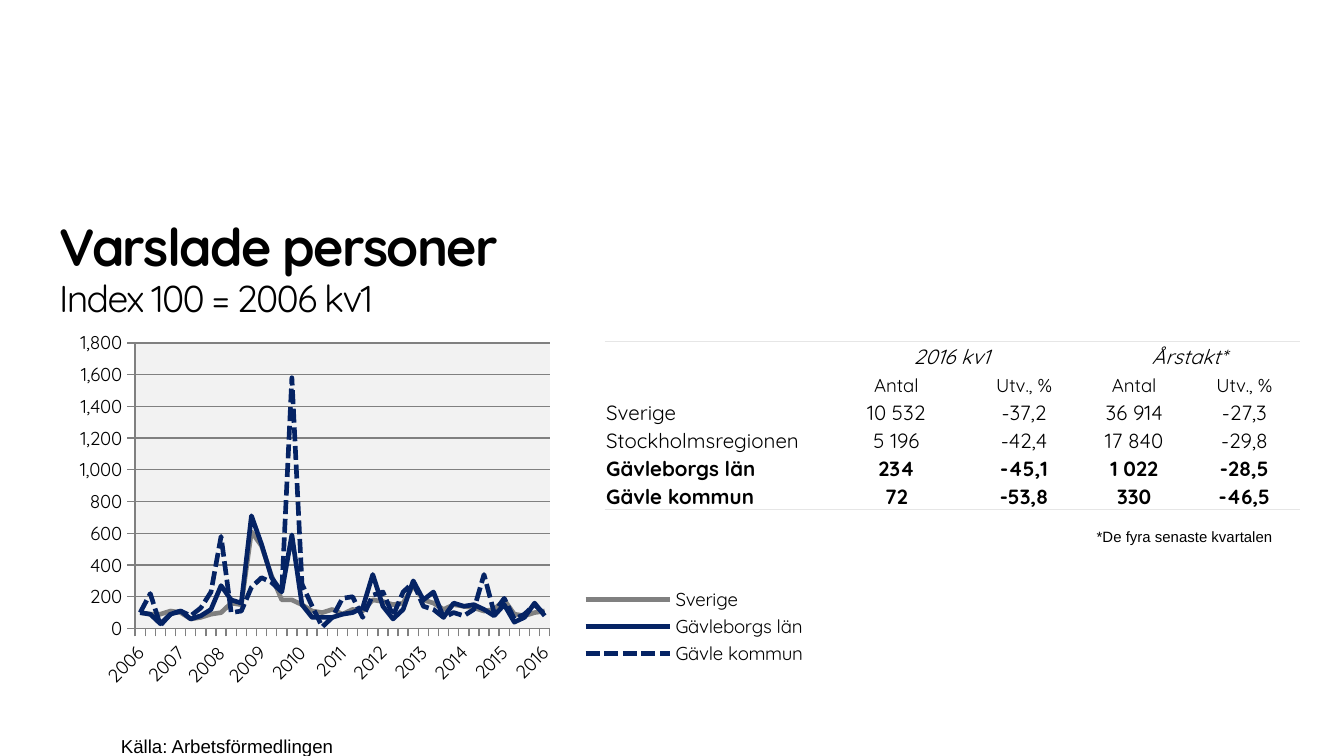
from dataclasses import dataclass

from lxml import etree
from pptx import Presentation
from pptx.chart.data import CategoryChartData
from pptx.dml.color import RGBColor
from pptx.enum.chart import XL_CHART_TYPE, XL_LEGEND_POSITION, XL_TICK_MARK
from pptx.enum.dml import MSO_LINE
from pptx.enum.text import MSO_ANCHOR, MSO_AUTO_SIZE, PP_ALIGN
from pptx.oxml import parse_xml
from pptx.oxml.ns import nsdecls, qn
from pptx.util import Inches, Pt

LINE_CHART = XL_CHART_TYPE.LINE
LEGEND_RIGHT = XL_LEGEND_POSITION.RIGHT
TICK_OUTSIDE = XL_TICK_MARK.OUTSIDE
SOLID, DASHED = MSO_LINE.SOLID, MSO_LINE.SQUARE_DOT
BOTTOM = MSO_ANCHOR.BOTTOM
FIT_SHAPE = MSO_AUTO_SIZE.SHAPE_TO_FIT_TEXT
LEFT, CENTER = PP_ALIGN.LEFT, PP_ALIGN.CENTER
TITLE_ONLY = 5
PLAIN_TABLE_STYLE = "{2D5ABB26-0587-4C30-8999-92F81FD0307C}"
WIDTH = Inches(10)
HEIGHT = WIDTH * 9 // 16


@dataclass(frozen=True)
class Theme:
    font: str = "Quicksand"
    note_font: str = "Arial"
    text: str = "000000"
    grey: str = "808080"
    navy: str = "052364"
    plot: str = "F2F2F2"
    rule: str = "E6E6E6"
    title_size: float = 28
    subtitle_size: float = 20
    table_size: float = 11
    small_size: float = 10
    note_size: float = 8
    series_width: float = 2.5


THEME = Theme()

COLUMN_WIDTHS = (1.63, 1.08, 0.82, 0.82, 0.82)
TABLE_ROWS = (
    ("", "2016 kv1", "", "Årstakt*", ""),
    ("", "Antal", "Utv., %", "Antal", "Utv., %"),
    ("Sverige", "10 532", "-37,2", "36 914", "-27,3"),
    ("Stockholmsregionen", "5 196", "-42,4", "17 840", "-29,8"),
    ("Gävleborgs län", "234", "-45,1", "1 022", "-28,5"),
    ("Gävle kommun", "72", "-53,8", "330", "-46,5"),
)
GROUP_ROW, UNIT_ROW, FIRST_BOLD_ROW = 0, 1, 4
LAST_ROW = len(TABLE_ROWS) - 1

QUARTERS = [str(2006 + i // 4) if i % 4 == 0 else "" for i in range(41)]
SERIES = (
    ("Sverige", THEME.grey, SOLID,
     (100, 90, 90, 110, 100, 60, 70, 90, 100, 160, 150, 610, 520, 330, 180, 180, 150, 110,
      100, 120, 90, 120, 110, 180, 170, 150, 160, 270, 180, 160, 120, 150, 140, 130, 110,
      120, 180, 90, 80, 100, 110)),
    ("Gävleborgs län", THEME.navy, SOLID,
     (100, 90, 30, 90, 110, 60, 80, 120, 270, 180, 160, 710, 530, 320, 230, 590, 150, 70,
      70, 70, 90, 100, 130, 340, 140, 60, 120, 300, 180, 230, 70, 160, 140, 150, 120, 80,
      150, 40, 70, 160, 80)),
    ("Gävle kommun", THEME.navy, DASHED,
     (100, 220, 20, 90, 110, 80, 130, 230, 580, 100, 110, 260, 320, 290, 230, 1580, 280,
      140, 10, 70, 190, 200, 70, 210, 230, 80, 230, 290, 140, 120, 70, 100, 80, 120, 340,
      100, 190, 60, 90, 150, 90)),
)


def area(left, top, width, height):
    """Turn percentages of the slide into a position and size."""
    return (int(WIDTH * left / 100), int(HEIGHT * top / 100),
            int(WIDTH * width / 100), int(HEIGHT * height / 100))


def style_font(font, size, name=THEME.font, bold=False, italic=False):
    font.name, font.size, font.bold, font.italic = name, Pt(size), bold, italic
    font.color.rgb = RGBColor.from_string(THEME.text)


def clear_margins(text_frame):
    text_frame.margin_left = text_frame.margin_right = 0
    text_frame.margin_top = text_frame.margin_bottom = 0


def add_title(slide, heading, subheading, place):
    title = slide.shapes.title
    title.left, title.top, title.width, title.height = place
    text_frame = title.text_frame
    clear_margins(text_frame)
    text_frame.vertical_anchor = BOTTOM
    text_frame.text = f"{heading}\v{subheading}"
    paragraph = text_frame.paragraphs[0]
    paragraph.alignment = LEFT
    paragraph.line_spacing = 0.95
    sizes = (THEME.title_size, THEME.subtitle_size)
    for run, size in zip(paragraph.runs, sizes):
        style_font(run.font, size, bold=size == THEME.title_size)
        run.font._element.set("spc", "-90")


def add_note(slide, text, size, place):
    text_frame = slide.shapes.add_textbox(*place).text_frame
    clear_margins(text_frame)
    text_frame.word_wrap = False
    text_frame.auto_size = FIT_SHAPE
    text_frame.text = text
    paragraph = text_frame.paragraphs[0]
    paragraph.alignment = LEFT
    paragraph.line_spacing = Pt(24)
    style_font(paragraph.runs[0].font, size, THEME.note_font)


def add_border(cell, side):
    border = etree.SubElement(cell._tc.get_or_add_tcPr(), qn(f"a:ln{side}"), w=str(Pt(1)))
    fill = etree.SubElement(border, qn("a:solidFill"))
    etree.SubElement(fill, qn("a:srgbClr"), val=THEME.rule)


def fill_cell(cell, text, row, column):
    if row == GROUP_ROW:
        add_border(cell, "T")
    if row == LAST_ROW:
        add_border(cell, "B")
    cell.fill.background()
    cell.vertical_anchor = BOTTOM
    cell.margin_left = cell.margin_right = cell.margin_top = Inches(0.01)
    cell.margin_bottom = 0
    cell.text_frame.text = text
    paragraph = cell.text_frame.paragraphs[0]
    paragraph.alignment = CENTER if column else LEFT
    size = THEME.small_size if row == UNIT_ROW else THEME.table_size
    for run in paragraph.runs:
        style_font(run.font, size, bold=row >= FIRST_BOLD_ROW, italic=row == GROUP_ROW)
    if not text:
        etree.SubElement(paragraph._p, qn("a:endParaRPr"), sz=str(int(size * 100)))


def add_figures_table(slide, place):
    table = slide.shapes.add_table(len(TABLE_ROWS), len(COLUMN_WIDTHS), *place).table
    table.first_row = table.horz_banding = False
    table._tbl.tblPr.find(qn("a:tableStyleId")).text = PLAIN_TABLE_STYLE
    for column, width in zip(table.columns, COLUMN_WIDTHS):
        column.width = Inches(width)
    for row, texts in enumerate(TABLE_ROWS):
        for column, text in enumerate(texts):
            fill_cell(table.cell(row, column), text, row, column)
    for column in (1, 3):
        table.cell(GROUP_ROW, column).merge(table.cell(GROUP_ROW, column + 1))


def set_layout(parent, index, x, y, width, height, inner=False):
    """Place a part of the chart by shares of the chart's size."""
    for layout in parent.findall(qn("c:layout")):
        parent.remove(layout)
    target = '<c:layoutTarget val="inner"/>' if inner else ""
    parent.insert(index, parse_xml(
        f'<c:layout {nsdecls("c")}><c:manualLayout>{target}'
        '<c:xMode val="edge"/><c:yMode val="edge"/>'
        f'<c:x val="{x}"/><c:y val="{y}"/><c:w val="{width}"/><c:h val="{height}"/>'
        '</c:manualLayout></c:layout>'))


def style_line(line, color, width):
    line.color.rgb = RGBColor.from_string(color)
    line.width = Pt(width)


def style_axes(chart):
    for axis in (chart.category_axis, chart.value_axis):
        axis.major_tick_mark = TICK_OUTSIDE
        style_line(axis.format.line, THEME.grey, 0.75)
    category_axis, value_axis = chart.category_axis, chart.value_axis
    style_font(category_axis.tick_labels.font, THEME.small_size)
    category_axis._element.find(f'{qn("c:txPr")}/{qn("a:bodyPr")}').set("rot", "-2700000")
    value_axis.minimum_scale, value_axis.maximum_scale, value_axis.major_unit = 0, 1800, 200
    value_axis.tick_labels.number_format = "#,##0"
    value_axis.tick_labels.number_format_is_linked = False
    style_line(value_axis.major_gridlines.format.line, THEME.grey, 0.75)


def add_index_chart(slide, place):
    data = CategoryChartData()
    data.categories = QUARTERS
    for name, _, _, values in SERIES:
        data.add_series(name, values)
    chart = slide.shapes.add_chart(LINE_CHART, *place, data).chart
    chart.has_title = False
    style_font(chart.font, THEME.small_size)
    chart.plots[0].vary_by_categories = False
    for series, (_, color, dash, _) in zip(chart.plots[0].series, SERIES):
        series.smooth = False
        style_line(series.format.line, color, THEME.series_width)
        series.format.line.dash_style = dash
    style_axes(chart)
    chart.has_legend = True
    chart.legend.position = LEGEND_RIGHT
    chart.legend.include_in_layout = False
    set_layout(chart.legend._element, 1, 0.69, 0.7, 0.31, 0.23)
    plot_area = chart._chartSpace.chart.plotArea
    set_layout(plot_area, 0, 0.09, 0.05, 0.56, 0.77, inner=True)
    plot_area.append(parse_xml(
        f'<c:spPr {nsdecls("c", "a")}><a:solidFill><a:srgbClr val="{THEME.plot}"/>'
        '</a:solidFill></c:spPr>'))


def main():
    presentation = Presentation()
    presentation.slide_width, presentation.slide_height = WIDTH, HEIGHT
    slide = presentation.slides.add_slide(presentation.slide_layouts[TITLE_ONLY])
    add_title(slide, "Varslade personer", "Index 100 = 2006 kv1", area(4.4, 28.3, 62.1, 14.2))
    add_note(slide, "Källa: Arbetsförmedlingen", THEME.small_size, area(9, 94.3, 15.8, 7.5))
    add_figures_table(slide, area(45, 45.2, 51.6, 22.2))
    add_note(slide, "*De fyra senaste kvartalen", THEME.note_size, area(81.6, 66.2, 13.1, 17.8))
    add_index_chart(slide, area(5.1, 42.9, 55.1, 49.1))
    presentation.save("out.pptx")


if __name__ == "__main__":
    main()
